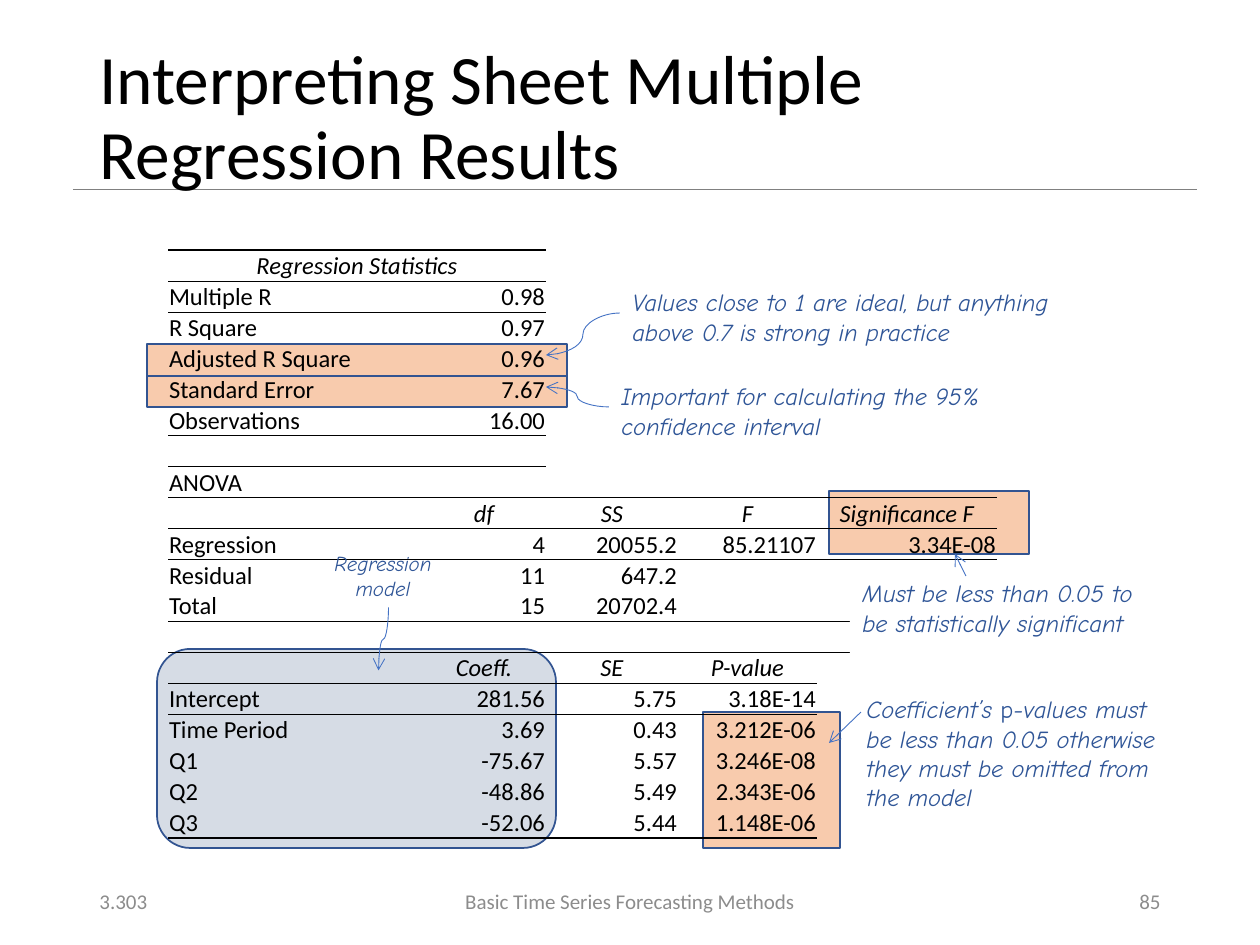
from lxml import etree
from pptx import Presentation
from pptx.dml.color import RGBColor
from pptx.enum.shapes import MSO_CONNECTOR, MSO_SHAPE
from pptx.enum.text import MSO_ANCHOR, PP_ALIGN
from pptx.oxml.ns import qn
from pptx.util import Emu, Pt

STRAIGHT, CURVE = MSO_CONNECTOR.STRAIGHT, MSO_CONNECTOR.CURVE
RECT, ROUNDED = MSO_SHAPE.RECTANGLE, MSO_SHAPE.ROUNDED_RECTANGLE
LEFT, CENTER, RIGHT = PP_ALIGN.LEFT, PP_ALIGN.CENTER, PP_ALIGN.RIGHT
TOP, MIDDLE, BOTTOM = MSO_ANCHOR.TOP, MSO_ANCHOR.MIDDLE, MSO_ANCHOR.BOTTOM

EMU_PER_PX = 914400 / 126
BODY_FONT, NOTE_FONT = "Calibri", "Comic Neue"
BLACK, WHITE, GREY, FOOTER_GREY = "000000", "FFFFFF", "808080", "8C8C8C"
NOTE_BLUE, ARROW_BLUE, OUTLINE_BLUE = "2F5597", "4472C4", "325491"
ORANGE, PALE_BLUE = "F8CBAD", "D6DCE5"
NO_STYLE_NO_GRID = "{2D5ABB26-0587-4C30-8999-92F81FD0307C}"

COLUMN_WIDTHS = [254, 124, 132, 139, 180]
ROW_HEIGHT = 31
HEADER_ROWS = {0, 8, 13}
ROWS = [
    ["Regression Statistics"],
    ["Multiple R", "0.98"],
    ["R Square", "0.97"],
    ["Adjusted R Square", "0.96"],
    ["Standard Error", "7.67"],
    ["Observations", "16.00"],
    [],
    ["ANOVA"],
    ["", "df", "SS", "F", "Significance F"],
    ["Regression", "4", "20055.2", "85.21107", "3.34E-08"],
    ["Residual", "11", "647.2"],
    ["Total", "15", "20702.4"],
    [],
    ["", "Coeff.", "SE", "P-value"],
    ["Intercept", "281.56", "5.75", "3.18E-14"],
    ["Time Period", "3.69", "0.43", "3.212E-06"],
    ["Q1", "-75.67", "5.57", "3.246E-08"],
    ["Q2", "-48.86", "5.49", "2.343E-06"],
    ["Q3", "-52.06", "5.44", "1.148E-06"],
]
# Rule above the given row: (columns it spans, width in points)
RULES = {0: (2, 1), 1: (2, 0.5), 6: (2, 1), 8: (5, 1), 9: (5, 0.5),
         12: (5, 1), 13: (4, 1), 14: (4, 0.5), 19: (4, 1)}


def px(length):
    return Emu(round(length * EMU_PER_PX))


def color(value):
    return RGBColor.from_string(value)


def format_span(span, size, font, fill, italic=False):
    span.font.size = Pt(size)
    span.font.name = font
    span.font.italic = italic
    span.font.color.rgb = color(fill)


def add_text(page, bounds, spans, size, font, fill, align=LEFT, anchor=TOP,
             background=None, line_spacing=None):
    """Add a text box; spans is a list of (text, italic) pairs."""
    box = page.shapes.add_textbox(*map(px, bounds))
    if background:
        box.fill.solid()
        box.fill.fore_color.rgb = color(background)
    frame = box.text_frame
    frame.word_wrap = True
    frame.vertical_anchor = anchor
    para = frame.paragraphs[0]
    para.alignment = align
    if line_spacing:
        para.line_spacing = line_spacing
    for text, italic in spans:
        span = para.add_run()
        span.text = text
        format_span(span, size, font, fill, italic)


def add_note(page, bounds, spans, size=14, align=LEFT, background=None):
    add_text(page, bounds, spans, size, NOTE_FONT, NOTE_BLUE, align,
             background=background)


def add_highlight(page, bounds, fill, kind=RECT):
    shape = page.shapes.add_shape(kind, *map(px, bounds))
    shape.shadow.inherit = False
    shape.fill.solid()
    shape.fill.fore_color.rgb = color(fill)
    shape.line.color.rgb = color(OUTLINE_BLUE)
    shape.line.width = Pt(1)


def add_line(page, points, stroke, kind=STRAIGHT, arrow=True, quarter_turn=False):
    line = page.shapes.add_connector(kind, *map(px, points))
    line.line.color.rgb = color(stroke)
    line.line.width = Pt(0.5)
    properties = line._element.spPr
    if arrow:
        etree.SubElement(line.line._get_or_add_ln(), qn("a:tailEnd"), type="arrow")
    if quarter_turn:
        properties.find(qn("a:xfrm")).set("rot", "5400000")
    etree.SubElement(properties, qn("a:effectLst"))


def add_border(cell, side, width):
    border = etree.SubElement(cell._tc.get_or_add_tcPr(), qn("a:" + side),
                              w=str(Pt(width)))
    fill = etree.SubElement(border, qn("a:solidFill"))
    etree.SubElement(fill, qn("a:srgbClr"), val=BLACK)


def fill_cell(cell, text, row, column):
    cell.margin_left = cell.margin_right = cell.margin_top = px(1)
    cell.margin_bottom = 0
    cell.vertical_anchor = BOTTOM
    for side, boundary in (("lnT", row), ("lnB", row + 1)):
        span_count, width = RULES.get(boundary, (0, 0))
        if column < span_count:
            add_border(cell, side, width)
    cell.fill.background()
    para = cell.text_frame.paragraphs[0]
    if not text:
        para._p.get_or_add_endParaRPr().set("sz", "1400")
        return
    para.text = text
    header = row in HEADER_ROWS
    para.alignment = CENTER if header else RIGHT if column else LEFT
    format_span(para.runs[0], 14, BODY_FONT, BLACK, header)


def add_results_table(page):
    frame = page.shapes.add_table(
        len(ROWS), len(COLUMN_WIDTHS), px(168), px(250),
        px(sum(COLUMN_WIDTHS)), px(ROW_HEIGHT * len(ROWS)))
    table = frame.table
    table.first_row = table.horz_banding = False
    table._tbl.tblPr.find(qn("a:tableStyleId")).text = NO_STYLE_NO_GRID
    for column, width in enumerate(COLUMN_WIDTHS):
        table.columns[column].width = px(width)
    for row, values in enumerate(ROWS):
        table.rows[row].height = px(ROW_HEIGHT)
        for column in range(len(COLUMN_WIDTHS)):
            text = values[column] if column < len(values) else ""
            fill_cell(table.cell(row, column), text, row, column)
    table.cell(0, 0).merge(table.cell(0, 1))


def main():
    deck = Presentation()
    deck.slide_width, deck.slide_height = px(1260), px(945)
    page = deck.slides.add_slide(deck.slide_layouts[6])

    add_line(page, (73, 189, 1197, 189), GREY, arrow=False)
    add_highlight(page, (157, 649, 399, 199), PALE_BLUE, ROUNDED)
    for bounds in ((703, 712, 137, 136), (829, 491, 200, 63),
                   (147, 376, 420, 31), (147, 344, 420, 32)):
        add_highlight(page, bounds, ORANGE)

    add_text(page, (87, 50, 1086, 139),
             [("Interpreting Sheet Multiple Regression Results", False)],
             39.6, BODY_FONT, BLACK, anchor=MIDDLE, line_spacing=0.9)
    for left, width, text, align in (
            (87, 284, "3.303", LEFT),
            (417, 426, "Basic Time Series Forecasting Methods", CENTER),
            (890, 283, "85", RIGHT)):
        add_text(page, (left, 876, width, 50), [(text, False)], 12, BODY_FONT,
                 FOOTER_GREY, align, MIDDLE)

    add_results_table(page)

    add_note(page, (620, 281, 459, 102),
             [("Values close to 1 are ideal, but anything above 0.7 is strong in practice", True)])
    add_line(page, (620, 313, 546, 355), ARROW_BLUE, CURVE)
    add_note(page, (609, 375, 388, 72),
             [("Important for calculating the 95% confidence interval", True)])
    add_line(page, (609, 407, 546, 387), ARROW_BLUE, CURVE)
    add_note(page, (850, 572, 315, 102),
             [("Must be less than 0.05 to be statistically significant", True)],
             background=WHITE)
    add_line(page, (966, 576, 955, 554), ARROW_BLUE)
    add_note(page, (854, 688, 315, 131),
             [("Coefficient’s ", True), ("p", False),
              ("-values must be less than 0.05 otherwise they must be omitted from the model", True)],
             background=WHITE)
    add_line(page, (861, 712, 829, 743), ARROW_BLUE)
    add_note(page, (315, 544, 136, 63), [("Regression model", True)], 12, CENTER)
    add_line(page, (352, 634, 415, 644), ARROW_BLUE, CURVE, quarter_turn=True)

    deck.save("out.pptx")


if __name__ == "__main__":
    main()
